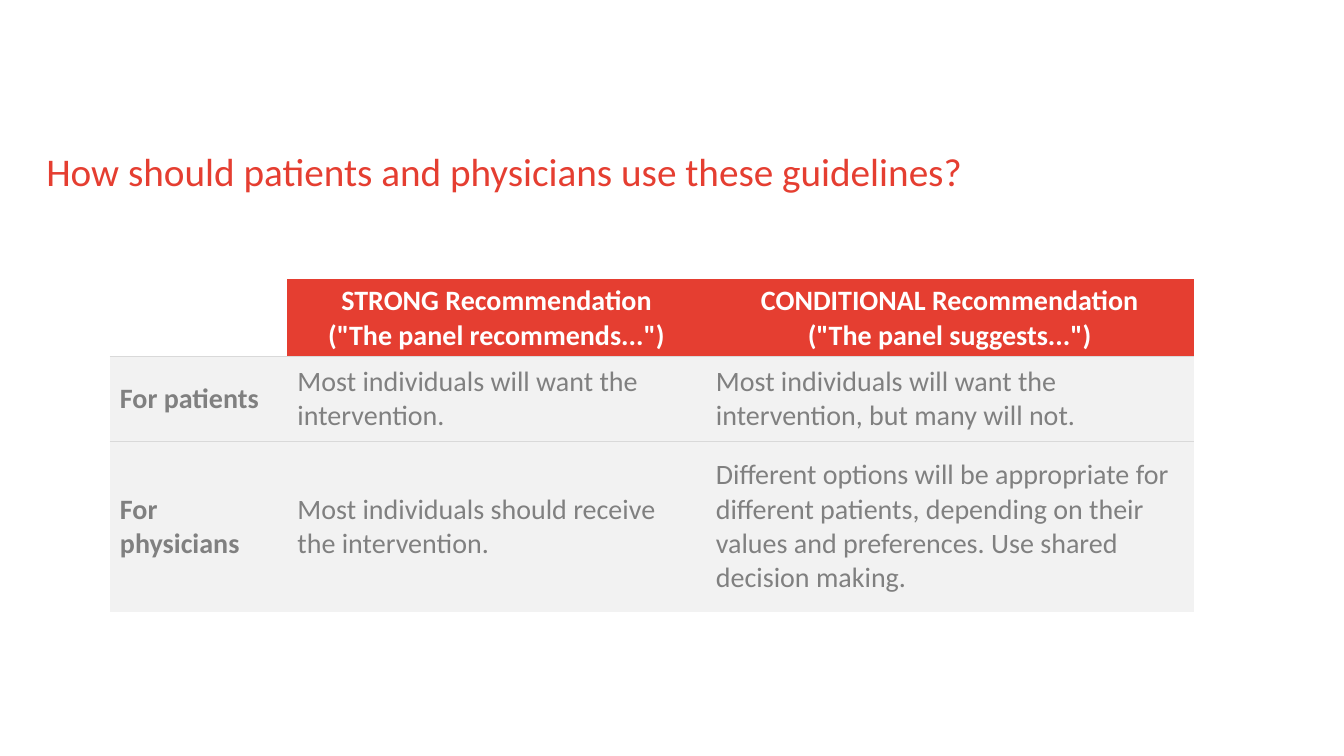
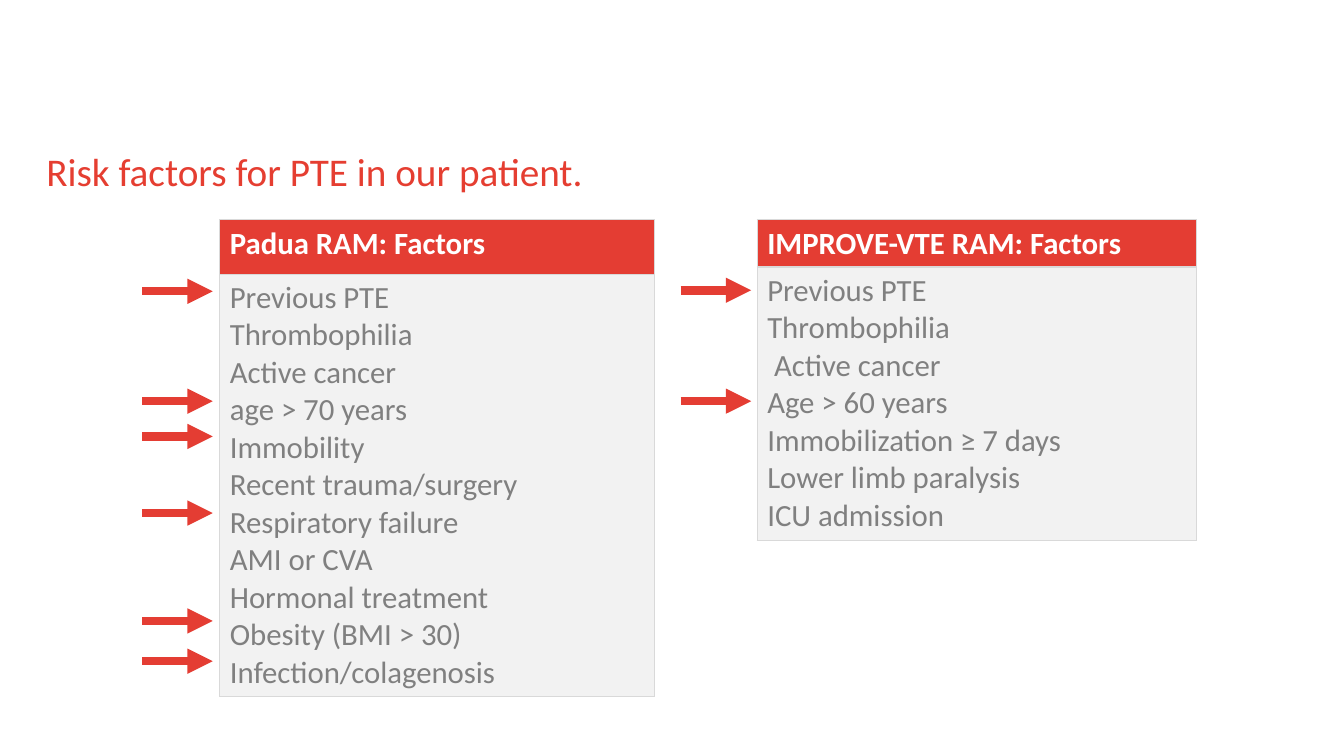
from dataclasses import dataclass

from pptx import Presentation
from pptx.dml.color import RGBColor
from pptx.enum.shapes import MSO_CONNECTOR
from pptx.enum.text import MSO_ANCHOR, PP_ALIGN
from pptx.oxml.ns import qn
from pptx.util import Inches, Pt
from lxml.etree import SubElement

# Content
GUIDELINE_TITLE = "How should patients and physicians use these guidelines?"
GUIDELINE_ROWS = [
    ["", ["STRONG Recommendation", '("The panel recommends...")'],
     ["CONDITIONAL Recommendation", '("The panel suggests...")']],
    ["For patients", "Most individuals will want the intervention.",
     "Most individuals will want the intervention, but many will not."],
    ["For physicians", "Most individuals should receive the intervention.",
     "Different options will be appropriate for different patients, depending on "
     "their values and preferences. Use shared decision making."],
]
GUIDELINE_WIDTHS = [1.76, 4.15, 4.84]
GUIDELINE_HEIGHTS = [0.77, 0.84, 1.69]

RISK_TITLE = "Risk factors for PTE in our patient."
RISK_PANELS = [
    {"heading": "Padua RAM: Factors", "left": 2.18, "width": 4.31,
     "heights": [0.54, 4.19], "arrow_left": 1.41,
     "arrow_tops": [2.89, 3.98, 4.33, 5.09, 6.16, 6.56],
     "factors": ["Previous PTE", "Thrombophilia", "Active cancer", "age > 70 years",
                 "Immobility", "Recent trauma/surgery", "Respiratory failure",
                 "AMI or CVA", "Hormonal treatment", "Obesity (BMI > 30)",
                 "Infection/colagenosis"]},
    {"heading": "IMPROVE-VTE RAM: Factors", "left": 7.51, "width": 4.36,
     "heights": [0.47, 2.71], "arrow_left": 6.75,
     "arrow_tops": [2.88, 3.98],
     "factors": ["Previous PTE", "Thrombophilia", " Active cancer", "Age > 60 years",
                 "Immobilization ≥ 7 days", "Lower limb paralysis", "ICU admission"]},
]
PANEL_TOP = 2.18
ARROW_LENGTH = 0.7


@dataclass(frozen=True)
class Theme:
    font: str = "Calibri"
    title_red: str = "E53E31"
    panel_red: str = "E43D33"
    white: str = "FFFFFF"
    body: str = "808080"
    cell: str = "F2F2F2"
    rule: str = "D9D9D9"
    title_size: int = 28
    guideline_size: int = 20
    panel_size: int = 22
    rule_width: int = 1
    arrow_width: int = 6


THEME = Theme()


# Shared helpers
def write(frame, text, size, color, bold=False, align=PP_ALIGN.LEFT):
    """Fill a text frame with one paragraph per item of text."""
    frame.word_wrap = True
    for index, line in enumerate([text] if isinstance(text, str) else text):
        para = frame.paragraphs[0] if index == 0 else frame.add_paragraph()
        para.alignment = align
        span = para.add_run()
        span.text = line
        span.font.name = THEME.font
        span.font.size = Pt(size)
        span.font.bold = bold
        span.font.color.rgb = RGBColor.from_string(color)


def add_page(deck, title):
    page = deck.slides.add_slide(deck.slide_layouts[6])
    box = page.shapes.add_textbox(Inches(0.46), Inches(1.47), Inches(12), Inches(0.46))
    frame = box.text_frame
    frame.margin_left = frame.margin_right = frame.margin_top = frame.margin_bottom = 0
    frame.vertical_anchor = MSO_ANCHOR.MIDDLE
    write(frame, title, THEME.title_size, THEME.title_red)
    return page


def add_plain_table(page, left, top, widths, heights):
    table = page.shapes.add_table(
        len(heights), len(widths), Inches(left), Inches(top),
        Inches(sum(widths)), Inches(sum(heights))).table
    table.first_row = table.horz_banding = False
    for column, width in zip(table.columns, widths):
        column.width = Inches(width)
    for row, height in zip(table.rows, heights):
        row.height = Inches(height)
    return table


def style_cell(cell, fill, ruled_sides):
    """Rule the given sides (of L, R, T, B), clear the others, then fill."""
    properties = cell._tc.get_or_add_tcPr()
    for side in "LRTB":
        line = SubElement(properties, qn(f"a:ln{side}"), w=str(Pt(THEME.rule_width)))
        if side in ruled_sides:
            solid = SubElement(line, qn("a:solidFill"))
            SubElement(solid, qn("a:srgbClr"), val=THEME.rule)
        else:
            SubElement(line, qn("a:noFill"))
    if fill:
        cell.fill.solid()
        cell.fill.fore_color.rgb = RGBColor.from_string(fill)
    else:
        cell.fill.background()


def add_arrow(page, left, top):
    arrow = page.shapes.add_connector(
        MSO_CONNECTOR.STRAIGHT, Inches(left), Inches(top),
        Inches(left + ARROW_LENGTH), Inches(top))
    arrow.line.color.rgb = RGBColor.from_string(THEME.panel_red)
    arrow.line.width = Pt(THEME.arrow_width)
    SubElement(arrow.line._get_or_add_ln(), qn("a:tailEnd"), type="triangle")
    SubElement(arrow._element.spPr, qn("a:effectLst"))


# Slides
def build_guidelines(deck):
    page = add_page(deck, GUIDELINE_TITLE)
    table = add_plain_table(page, 1.09, 2.77, GUIDELINE_WIDTHS, GUIDELINE_HEIGHTS)
    last_row = len(GUIDELINE_ROWS) - 1
    for row, texts in enumerate(GUIDELINE_ROWS):
        is_header = row == 0
        sides = ("" if is_header else "T") + ("" if row == last_row else "B")
        for column, text in enumerate(texts):
            cell = table.cell(row, column)
            header_fill = THEME.title_red if text else None
            style_cell(cell, header_fill if is_header else THEME.cell, sides)
            cell.vertical_anchor = MSO_ANCHOR.MIDDLE
            if text:
                write(cell.text_frame, text, THEME.guideline_size,
                      THEME.white if is_header else THEME.body,
                      bold=is_header or column == 0,
                      align=PP_ALIGN.CENTER if is_header else PP_ALIGN.LEFT)


def build_risk_factors(deck):
    page = add_page(deck, RISK_TITLE)
    for panel in RISK_PANELS:
        table = add_plain_table(page, panel["left"], PANEL_TOP,
                                [panel["width"]], panel["heights"])
        heading, factors = table.cell(0, 0), table.cell(1, 0)
        style_cell(heading, THEME.panel_red, "LRTB")
        write(heading.text_frame, panel["heading"], THEME.panel_size, THEME.white, bold=True)
        style_cell(factors, THEME.cell, "LRTB")
        write(factors.text_frame, panel["factors"], THEME.panel_size, THEME.body)
        for top in panel["arrow_tops"]:
            add_arrow(page, panel["arrow_left"], top)


def main():
    deck = Presentation()
    deck.slide_width, deck.slide_height = Inches(13.33), Inches(7.5)
    build_guidelines(deck)
    build_risk_factors(deck)
    deck.save("out.pptx")


if __name__ == "__main__":
    main()
